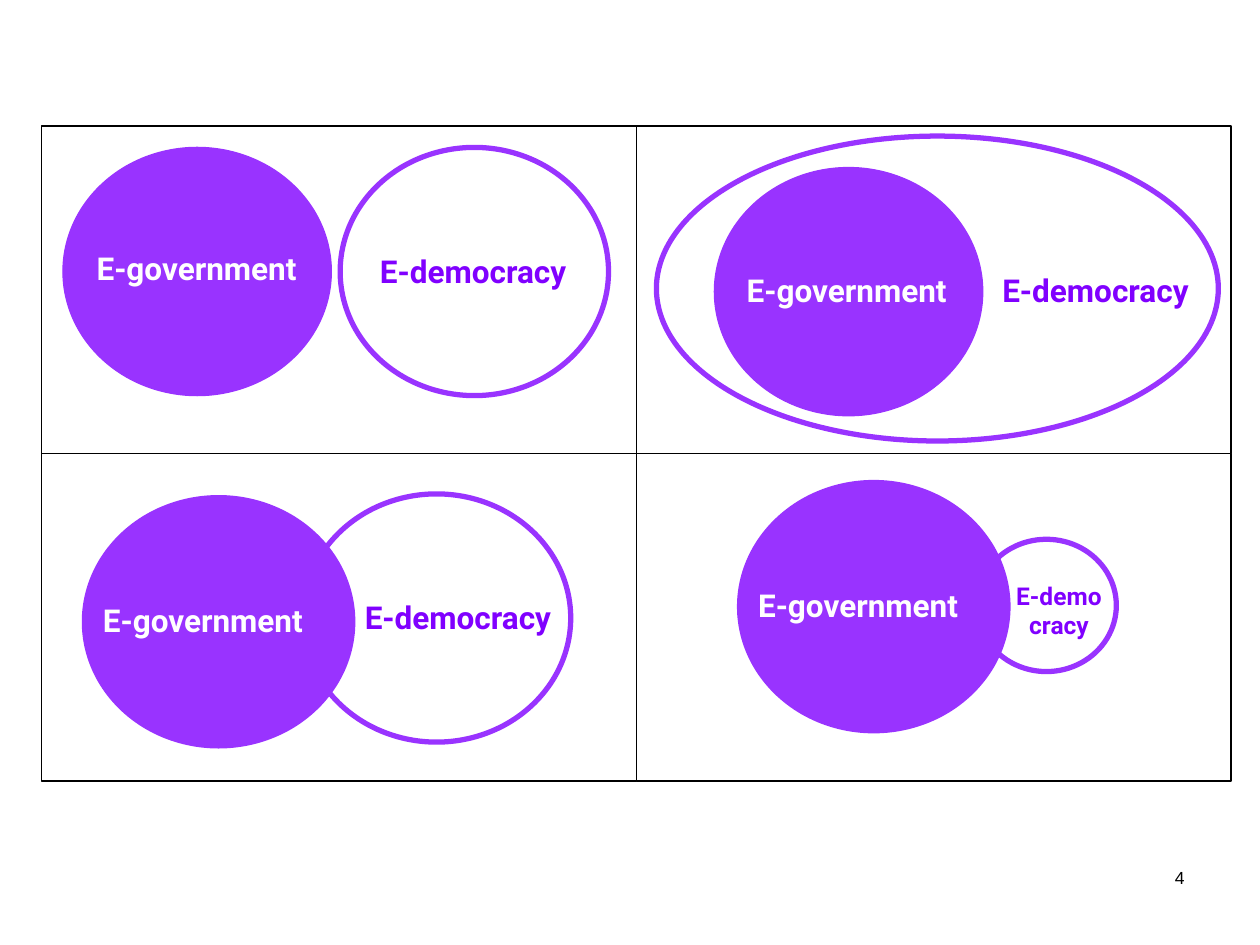
from pptx import Presentation
from pptx.dml.color import RGBColor
from pptx.enum.shapes import MSO_SHAPE
from pptx.enum.text import MSO_ANCHOR, MSO_AUTO_SIZE, PP_ALIGN
from pptx.util import Inches, Pt

COLORS = {
    "grid": "000000",
    "circle": "9933FF",
    "government": "FFFFFF",
    "democracy": "8000FF",
}
CIRCLE = (2.13, 1.97)
GOVERNMENT_LABEL = (1.88, 0.4)
DEMOCRACY_LABEL = (1.77, 0.4)


class DiagramSlide:
    font = "Roboto"

    def __init__(self, slide):
        self.slide = slide

    def color(self, name):
        return RGBColor.from_string(COLORS[name])

    def outline(self, kind, position, size, line, width, fill=None):
        shape = self.slide.shapes.add_shape(
            kind, *(Inches(value) for value in (*position, *size))
        )
        shape.shadow.inherit = False
        if fill:
            shape.fill.solid()
            shape.fill.fore_color.rgb = self.color(fill)
        else:
            shape.fill.background()
        shape.line.color.rgb = self.color(line)
        shape.line.width = Pt(width)

    def cell(self, position, size):
        self.outline(MSO_SHAPE.RECTANGLE, position, size, "grid", 0.75)

    def ellipse(self, position, size=CIRCLE, fill=None, width=3):
        self.outline(MSO_SHAPE.OVAL, position, size, "circle", width, fill)

    def text(self, lines, position, size, color, points=18, font=None,
             bold=True, alignment=PP_ALIGN.CENTER, wrap=False):
        shape = self.slide.shapes.add_textbox(
            *(Inches(value) for value in (*position, *size))
        )
        frame = shape.text_frame
        frame.word_wrap = wrap
        frame.auto_size = MSO_AUTO_SIZE.NONE if wrap else MSO_AUTO_SIZE.SHAPE_TO_FIT_TEXT
        frame.vertical_anchor = MSO_ANCHOR.TOP
        for index, line in enumerate(lines):
            paragraph = frame.add_paragraph() if index else frame.paragraphs[0]
            paragraph.alignment = alignment
            run = paragraph.add_run()
            run.text = line
            run.font.name = font or self.font
            run.font.size = Pt(points)
            run.font.bold = bold
            run.font.color.rgb = self.color(color)

    def government(self, circle, label, width=3):
        self.ellipse(circle, fill="circle", width=width)
        self.text(["E-government"], label, GOVERNMENT_LABEL, "government")

    def democracy(self, circle, label, size=CIRCLE):
        self.ellipse(circle, size)
        self.text(["E-democracy"], label, DEMOCRACY_LABEL, "democracy")


def main():
    presentation = Presentation()
    presentation.slide_width = Inches(10)
    presentation.slide_height = Inches(7.5)
    diagram = DiagramSlide(presentation.slides.add_slide(presentation.slide_layouts[6]))

    diagram.text(["4"], (7.17, 6.83), (2.33, 0.5), "grid", points=10,
                 font="Arial", bold=False, alignment=PP_ALIGN.RIGHT, wrap=True)

    cell_width, cell_height = 4.72, 2.6
    for row in range(2):
        for column in range(2):
            diagram.cell((0.33 + column * cell_width, 1 + row * cell_height),
                         (cell_width, cell_height))

    diagram.government((0.5, 1.17), (0.62, 1.93), width=0.75)
    diagram.democracy((2.7, 1.17), (2.87, 1.95))

    diagram.government((5.67, 1.33), (5.78, 2.1), width=0.75)
    diagram.democracy((5.21, 1.08), (7.81, 2.1), size=(4.46, 2.42))

    diagram.democracy((2.4, 3.92), (2.75, 4.7))
    diagram.government((0.67, 3.95), (0.67, 4.72))

    diagram.ellipse((7.75, 4.28), (1.11, 1.05))
    diagram.government((5.87, 3.83), (5.87, 4.6))
    diagram.text(["E-demo", "cracy"], (7.95, 4.56), (0.91, 0.57), "democracy", points=14)

    presentation.save("out.pptx")


if __name__ == "__main__":
    main()
